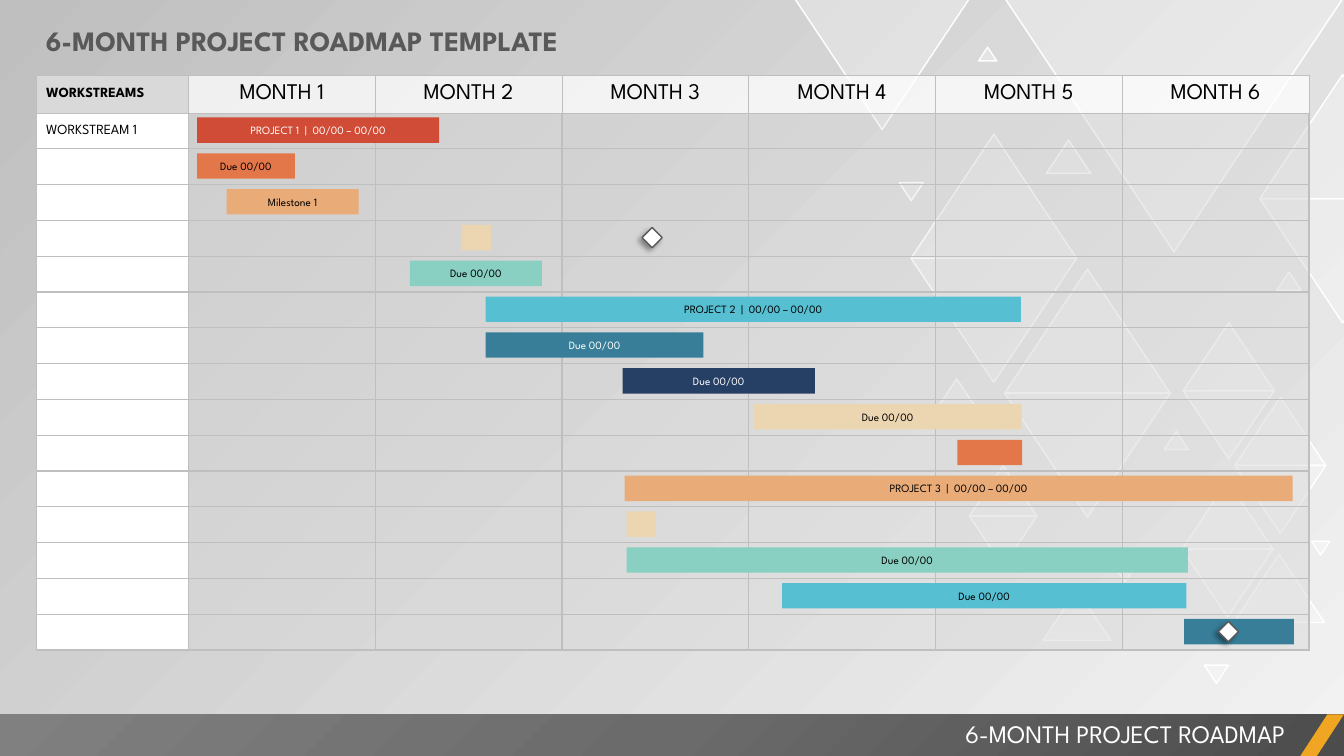
import dataclasses

import lxml.etree
import pptx
import pptx.dml.color
import pptx.enum.shapes
import pptx.enum.text
import pptx.oxml.ns
import pptx.util

Cm = pptx.util.Cm
Pt = pptx.util.Pt
SHAPE = pptx.enum.shapes.MSO_SHAPE
ALIGN = pptx.enum.text.PP_ALIGN
MIDDLE = pptx.enum.text.MSO_ANCHOR.MIDDLE


@dataclasses.dataclass(frozen=True)
class Theme:
    font: str = "League Spartan"
    white: str = "FFFFFF"
    black: str = "000000"
    dark: str = "595959"
    pale: str = "D9D9D9"
    grid: str = "BFBFBF"
    accent: str = "F0A622"
    red: str = "D14C36"
    orange: str = "E4774A"
    peach: str = "E9AB77"
    sand: str = "ECD6B2"
    mint: str = "89D0C2"
    sky: str = "56BFD2"
    teal: str = "387E99"
    navy: str = "264065"
    backdrop: tuple = ((0, "F2F2F2", 40), (100, "BFBFBF", 100))
    band: tuple = ((0, "4C4C4C", 100), (50, "6B6B6B", 100), (100, "808080", 100))
    title_size: int = 20
    footer_size: int = 18
    month_size: int = 16
    label_size: int = 10
    bar_size: int = 8


@dataclasses.dataclass(frozen=True)
class Box:
    """A region in centimetres."""
    x: float
    y: float
    w: float
    h: float

    def inner(self, dx, dy, w, h):
        return Box(self.x + dx, self.y + dy, w, h)

    def lengths(self):
        return Cm(self.x), Cm(self.y), Cm(self.w), Cm(self.h)


T = Theme()
ROWS = 15
HEADER_H = 0.94
LABEL_W = 3.84
MONTH_TINTS = (50, 50, 25, 25, 50, 50)

# Left, top, width
DIAMOND_PAIRS = [
    (22.96, 3.38, 4.17), (25.32, 6.78, 4.17), (29.79, 12.12, 2.29), (29.82, 8.13, 2.29),
    (31.12, 10.01, 2.29), (24.43, 11.73, 1.7), (31.75, 1.88, 4.17),
]
UP_TRIANGLES = [
    (31.09, 13.97, 2.29), (26.29, 14.86, 1.7), (23.55, 9.55, 1.12), (29.34, 10.87, 0.61),
    (32.18, 6.86, 0.61), (24.66, 1.19, 0.46), (26.37, 3.53, 1.12),
]
DOWN_TRIANGLES = [
    (25.32, -0.05, 8.53), (27.79, 13.82, 1.12), (30.35, 16.76, 0.61),
    (22.66, 4.6, 0.61), (33.05, 13.64, 0.46), (20.02, -0.05, 4.42),
]

# One bar per row: left, width, fill, text, text colour
BARS = [
    (4.06, 6.1, T.red, "PROJECT 1  |  00/00 – 00/00", T.white),
    (4.06, 2.46, T.orange, "Due 00/00", T.black),
    (4.8, 3.33, T.peach, "Milestone 1", T.black),
    (10.72, 0.74, T.sand, "", T.black),
    (9.42, 3.33, T.mint, "Due 00/00", T.black),
    (11.33, 13.49, T.sky, "PROJECT 2  |  00/00 – 00/00", T.black),
    (11.33, 5.49, T.teal, "Due 00/00", T.white),
    (14.78, 4.85, T.navy, "Due 00/00", T.white),
    (18.08, 6.76, T.sand, "Due 00/00", T.black),
    (23.22, 1.63, T.orange, "", T.black),
    (14.83, 16.84, T.peach, "PROJECT 3  |  00/00 – 00/00", T.black),
    (14.88, 0.74, T.sand, "", T.black),
    (14.88, 14.15, T.mint, "Due 00/00", T.black),
    (18.8, 10.19, T.sky, "Due 00/00", T.black),
    (28.93, 2.77, T.teal, "", T.black),
]
MILESTONES = [(15.27, 3), (29.79, 14)]  # left, row


def add_xml(parent, tag, **attrs):
    return lxml.etree.SubElement(
        parent, pptx.oxml.ns.qn(tag), {k: str(v) for k, v in attrs.items()})


def add_color(parent, color, alpha=100):
    clr = add_xml(parent, "a:srgbClr", val=color)
    if alpha < 100:
        add_xml(clr, "a:alpha", val=alpha * 1000)


def set_fill(fill, color, alpha=100):
    fill.solid()
    fill.fore_color.rgb = pptx.dml.color.RGBColor.from_string(color)
    if alpha < 100:
        clr = fill._xPr.find(".//" + pptx.oxml.ns.qn("a:srgbClr"))
        add_xml(clr, "a:alpha", val=alpha * 1000)


def set_gradient(fill, stops):
    fill.gradient()
    grad = fill._xPr.find(pptx.oxml.ns.qn("a:gradFill"))
    gs_list = grad.find(pptx.oxml.ns.qn("a:gsLst"))
    gs_list.clear()
    for pos, color, alpha in stops:
        add_color(add_xml(gs_list, "a:gs", pos=pos * 1000), color, alpha)
    return grad


def add_shape(shapes, kind, box, color=None, alpha=100, line=None):
    sp = shapes.add_shape(kind, *box.lengths())
    sp.shadow.inherit = False
    if color:
        set_fill(sp.fill, color, alpha)
    if line:
        set_fill(sp.line.fill, line)
        sp.line.width = Pt(1)
    else:
        sp.line.fill.background()
    return sp


def write(tf, text, size, color, align=ALIGN.LEFT, bold=False):
    p = tf.paragraphs[0]
    p.alignment = align
    r = p.add_run()
    r.text = text
    r.font.name, r.font.size, r.font.bold = T.font, Pt(size), bold
    r.font.color.rgb = pptx.dml.color.RGBColor.from_string(color)


def add_text(s, box, *args, **kwargs):
    tf = s.shapes.add_textbox(*box.lengths()).text_frame
    tf.word_wrap = True
    write(tf, *args, **kwargs)


def add_backdrop(s, box):
    set_gradient(s.background.fill, T.backdrop)
    s.background.fill.gradient_angle = 135
    triangles = [(x, y, w, 0) for x, y, w in DIAMOND_PAIRS + UP_TRIANGLES]
    triangles += [(x, y + 0.75 * w, w, 180) for x, y, w in DIAMOND_PAIRS]
    triangles += [(x, y, w, 180) for x, y, w in DOWN_TRIANGLES]
    group = s.shapes.add_group_shape()
    for x, y, w, turn in triangles:
        sp = add_shape(group.shapes, SHAPE.ISOSCELES_TRIANGLE,
                       box.inner(x, y, w, 0.75 * w), T.white, 30, T.white)
        sp.rotation = turn


def add_footer(s, box):
    band = add_shape(s.shapes, SHAPE.RECTANGLE, box)
    grad = set_gradient(band.fill, T.band)
    grad.remove(grad.find(pptx.oxml.ns.qn("a:lin")))
    add_xml(add_xml(grad, "a:path", path="circle"), "a:fillToRect", l=100000, t=100000)
    slash = add_shape(s.shapes, SHAPE.PARALLELOGRAM,
                      box.inner(box.w - 1.1, 0, 1.1, box.h), T.accent)
    slash.adjustments[0] = 0.65
    add_text(s, box.inner(13.34, -0.02, 19.3, 1.02), "6-MONTH PROJECT ROADMAP",
             T.footer_size, T.white, ALIGN.RIGHT)


def style_cell(cell, color, alpha, edge):
    cell.vertical_anchor = MIDDLE
    cell.margin_top = cell.margin_bottom = 0
    set_fill(cell.fill, color, alpha)
    tc_pr = cell._tc.get_or_add_tcPr()
    for i, side in enumerate("LRTB"):
        width = 1 if side == "B" else edge
        ln = add_xml(tc_pr, "a:ln" + side, w=Pt(width))
        add_color(add_xml(ln, "a:solidFill"), T.grid)
        tc_pr.insert(i, ln)


def add_grid(s, box):
    months = len(MONTH_TINTS)
    table = s.shapes.add_table(ROWS + 1, months + 1, *box.lengths()).table
    table.first_row = table.horz_banding = False
    for i, col in enumerate(table.columns):
        col.width = Cm((box.w - LABEL_W) / months if i else LABEL_W)
    for i, row in enumerate(table.rows):
        row.height = Cm((box.h - HEADER_H) / ROWS if i else HEADER_H)
        header = i == 0
        style_cell(row.cells[0], T.pale if header else T.white, 100, 0.5 if header else 1)
        for month, tint in enumerate(MONTH_TINTS, 1):
            cell = row.cells[month]
            if header:
                style_cell(cell, T.white, 75, 0.5)
                write(cell.text_frame, f"MONTH {month}", T.month_size, T.black, ALIGN.CENTER)
            else:
                style_cell(cell, T.pale, tint, 1)
    write(table.cell(0, 0).text_frame, "WORKSTREAMS", T.label_size, T.black, bold=True)
    write(table.cell(1, 0).text_frame, "WORKSTREAM 1", T.label_size, T.black)


def add_schedule(s, box):
    bar_h, marker = 0.64, 0.51
    centers = [HEADER_H + i * (box.h - HEADER_H) / ROWS + 0.43 for i in range(ROWS)]
    for (x, w, color, text, ink), mid in zip(BARS, centers):
        sp = add_shape(s.shapes, SHAPE.RECTANGLE,
                       box.inner(x, mid - bar_h / 2, w, bar_h), color)
        if text:
            sp.text_frame.vertical_anchor = MIDDLE
            write(sp.text_frame, text, T.bar_size, ink, ALIGN.CENTER)
    # Milestone markers with a soft shadow
    for x, row in MILESTONES:
        sp = add_shape(s.shapes, SHAPE.DIAMOND,
                       box.inner(x, centers[row] - marker / 2, marker, marker),
                       T.white, line=T.dark)
        effects = sp._element.spPr.find(pptx.oxml.ns.qn("a:effectLst"))
        shadow = add_xml(effects, "a:outerShdw", blurRad=Pt(4), dist=Pt(3), dir=135 * 60000)
        add_color(shadow, T.black, 40)


def main():
    prs = pptx.Presentation()
    prs.slide_width, prs.slide_height = Cm(33.87), Cm(19.05)
    s = prs.slides.add_slide(prs.slide_layouts[6])
    chart = Box(0.91, 1.91, 32.08, 14.48)
    add_backdrop(s, Box(0, 0, 33.87, 19.05))
    add_footer(s, Box(0, 18, 33.87, 1.05))
    add_grid(s, chart)
    add_schedule(s, chart)
    add_text(s, Box(0.91, 0.48, 20.3, 1.12), "6-MONTH PROJECT ROADMAP TEMPLATE",
             T.title_size, T.dark, bold=True)
    prs.save("out.pptx")


if __name__ == "__main__":
    main()
